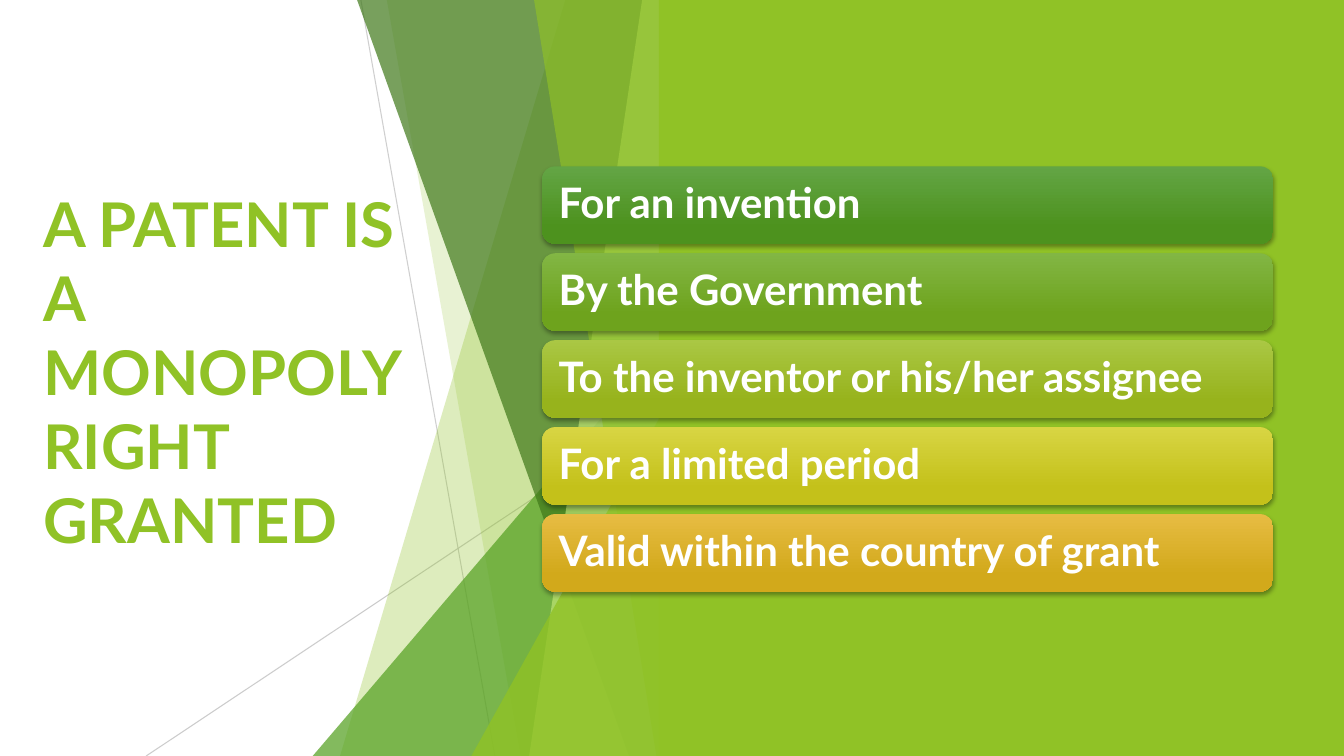
import pptx
import pptx.util
import pptx.dml.color
import pptx.enum.shapes
import pptx.enum.text
import pptx.oxml
import pptx.oxml.ns
from lxml import etree

Pt = pptx.util.Pt
RGB = pptx.dml.color.RGBColor
KIND = pptx.enum.shapes.MSO_SHAPE
MIDDLE = pptx.enum.text.MSO_ANCHOR.MIDDLE
qn = pptx.oxml.ns.qn

WHITE = RGB(0xFF, 0xFF, 0xFF)
GRAY = RGB(0xBF, 0xBF, 0xBF)
LIME = RGB(0x90, 0xC2, 0x26)
GREEN = RGB(0x54, 0xA0, 0x21)
DARK = RGB(0x3F, 0x78, 0x19)
PALE = RGB(0xC0, 0xE4, 0x74)
WIDE, HIGH = 960, 540
EDGE = 479.7  # right side shared by all facets

SHADOW = (
    '<a:effectLst xmlns:a="http://schemas.openxmlformats.org/drawingml/2006/main">'
    '<a:outerShdw blurRad="38100" dist="25400" dir="5400000" rotWithShape="0">'
    '<a:srgbClr val="000000"><a:alpha val="35000"/></a:srgbClr>'
    '</a:outerShdw></a:effectLst>'
)


def fade(shape, percent):
    """Set the opacity of the shape's one colour."""
    color = next(shape.element.spPr.iter(qn("a:srgbClr")))
    etree.SubElement(color, qn("a:alpha")).set("val", str(percent * 1000))


def write(shape, text, size, color):
    frame = shape.text_frame
    frame.word_wrap = True
    frame.vertical_anchor = MIDDLE
    para = frame.paragraphs[0]
    para.alignment = pptx.enum.text.PP_ALIGN.LEFT
    run = para.add_run()
    run.text = text
    run.font.name = "Lato"
    run.font.size = Pt(size)
    run.font.bold = True
    run.font.color.rgb = color
    return para


deck = pptx.Presentation()
deck.slide_width, deck.slide_height = Pt(WIDE), Pt(HIGH)
slide = deck.slides.add_slide(deck.slide_layouts[6])
shapes = slide.shapes

title = shapes.add_textbox(Pt(23.8), Pt(103.7), Pt(289.4), Pt(322.6))
write(title, "A PATENT IS A MONOPOLY RIGHT GRANTED", 44, LIME)

# Thin lines: start x, start y, end x, opacity
for x, y, end, alpha in [(257.8, 0, 353.5, 75), (EDGE, 290.2, 104.4, 80)]:
    line = shapes.add_connector(
        pptx.enum.shapes.MSO_CONNECTOR.STRAIGHT, Pt(x), Pt(y), Pt(end), Pt(HIGH))
    line.line.color.rgb = GRAY
    line.line.width = Pt(0.75)
    fade(line, alpha)
    etree.SubElement(line.element.spPr, qn("a:effectLst"))

# Facets: head x, head y, foot x, colour, opacity
TOP = -0.6
facets = [
    (404, TOP, 242.9, LIME, 30),
    (276.2, TOP, 371.8, LIME, 20),
    (EDGE, 239.8, 223.4, GREEN, 72),
    (254.9, TOP, 449.3, DARK, 70),
    (458.8, TOP, 378, PALE, 70),
    (381.4, TOP, 468.9, LIME, 65),
    (EDGE, 283, 336.7, LIME, 80),
]
for head, y, foot, color, alpha in facets:
    if head == EDGE:
        facet = shapes.add_shape(
            KIND.ISOSCELES_TRIANGLE, Pt(foot), Pt(y), Pt(EDGE - foot), Pt(HIGH - y))
        facet.adjustments[0] = 1
    else:
        path = shapes.build_freeform(Pt(head), Pt(y))
        path.add_line_segments(
            [(Pt(EDGE), Pt(y)), (Pt(EDGE), Pt(HIGH)), (Pt(foot), Pt(HIGH))], close=True)
        facet = path.convert_to_shape()
    facet.shadow.inherit = False
    facet.fill.solid()
    facet.fill.fore_color.rgb = color
    facet.line.fill.background()
    fade(facet, alpha)

panel = shapes.add_shape(KIND.RECTANGLE, Pt(470.6), 0, Pt(WIDE - 470.6), Pt(HIGH))
panel.shadow.inherit = False
panel.fill.solid()
panel.fill.fore_color.rgb = LIME
panel.line.fill.background()

# Bars: text, upper colour, lower colour
bars = [
    ("For an invention", RGB(0x63, 0xA5, 0x45), RGB(0x4D, 0x92, 0x1E)),
    ("By the Government", RGB(0x82, 0xB6, 0x44), RGB(0x6E, 0xA3, 0x1D)),
    ("To the inventor or his/her assignee", RGB(0xAA, 0xC7, 0x44), RGB(0x97, 0xB3, 0x1C)),
    ("For a limited period", RGB(0xD8, 0xD5, 0x43), RGB(0xC4, 0xC1, 0x1A)),
    ("Valid within the country of grant", RGB(0xE7, 0xBC, 0x43), RGB(0xD2, 0xA9, 0x1B)),
]
for i, (text, upper, lower) in enumerate(bars):
    bar = shapes.add_shape(
        KIND.ROUNDED_RECTANGLE, Pt(387.3), Pt(118.8 + 62.1 * i), Pt(522), Pt(55.4))
    bar.fill.gradient()
    bar.fill.gradient_angle = 270
    for stop, color, place in zip(bar.fill.gradient_stops, (upper, lower), (0, 0.78)):
        stop.color.rgb = color
        stop.position = place
    bar.line.fill.background()
    bar.element.spPr.append(pptx.oxml.parse_xml(SHADOW))
    frame = bar.text_frame
    # The rounded corners already inset the text a little
    frame.margin_left = frame.margin_right = Pt(9)
    frame.margin_top = frame.margin_bottom = Pt(9)
    write(bar, text, 30, WHITE).line_spacing = 0.9

deck.save("out.pptx")
